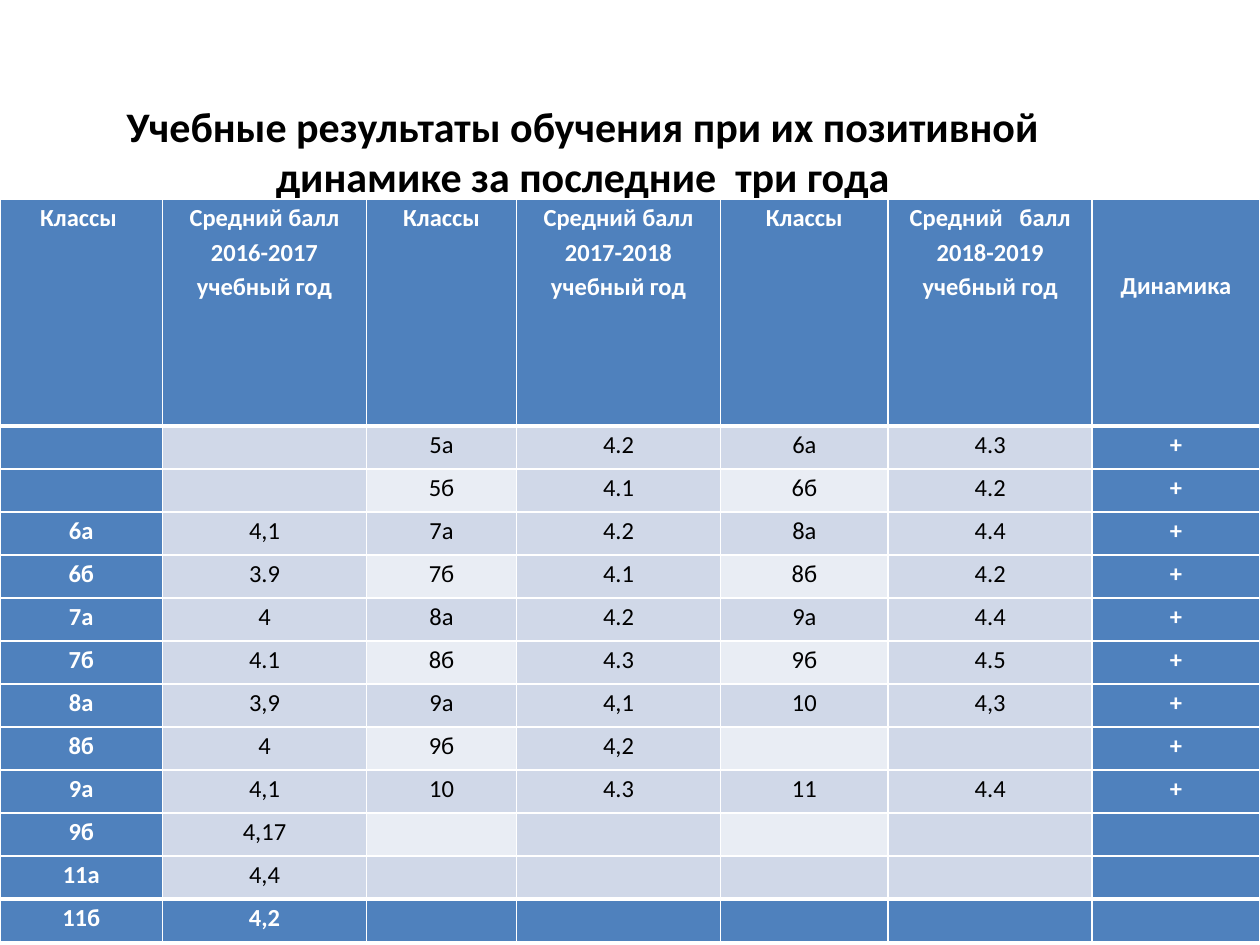
from lxml.etree import SubElement
from pptx import Presentation
from pptx.dml.color import RGBColor
from pptx.enum.text import MSO_ANCHOR, PP_ALIGN
from pptx.oxml.ns import qn
from pptx.util import Inches, Pt

BLUE = RGBColor(0x4F, 0x81, 0xBD)
BAND = RGBColor(0xD0, 0xD8, 0xE8)
PALE = RGBColor(0xE9, 0xED, 0xF4)
WHITE = RGBColor(0xFF, 0xFF, 0xFF)
BLACK = RGBColor(0x00, 0x00, 0x00)
FONT = "Calibri"

TITLE = "Учебные результаты обучения при их позитивной динамике за последние  три года"
COLUMN_WIDTHS = [1.29, 1.62, 1.19, 1.62, 1.33, 1.62, 1.33]
HEADER_HEIGHT = 1.8
HEADER_LINE = 0.27
ROWS = [
    ["Классы ", "Средний балл\n2016-2017\nучебный год", "Классы",
     "Средний балл\n2017-2018\nучебный год", "Классы",
     "Средний   балл\n2018-2019 учебный год", "Динамика"],
    ["", "", "5а", "4.2", "6а", "4.3", "+"],
    ["", "", "5б", "4.1", "6б", "4.2", "+"],
    ["6а", "4,1", "7а", "4.2", "8а", "4.4", "+"],
    ["6б", "3.9", "7б", "4.1", "8б", "4.2", "+"],
    ["7а", "4", "8а", "4.2", "9а", "4.4", "+"],
    ["7б", "4.1", "8б", "4.3", "9б", "4.5", "+"],
    ["8а", "3,9", "9а", "4,1", "10", "4,3", "+"],
    ["8б", "4", "9б", "4,2", "", "", "+"],
    ["9а", "4,1", "10", "4.3", "11", "4.4", "+"],
    ["9б", "4,17", "", "", "", "", ""],
    ["11а", "4,4", "", "", "", "", ""],
    ["11б", "4,2", "", "", "", "", ""],
]
LAST_ROW = len(ROWS) - 1
LAST_COLUMN = len(COLUMN_WIDTHS) - 1


def format_paragraph(paragraph, size, color, bold):
    """Centre a paragraph and style its runs."""
    paragraph.alignment = PP_ALIGN.CENTER
    for span in paragraph.runs:
        span.font.name = FONT
        span.font.size = Pt(size)
        span.font.bold = bold
        span.font.color.rgb = color


def set_borders(cell, top, bottom):
    """Draw white borders with the given top and bottom widths in points."""
    properties = cell._tc.get_or_add_tcPr()
    for side, width in (("L", 1), ("R", 1), ("T", top), ("B", bottom)):
        line = SubElement(properties, qn(f"a:ln{side}"), w=str(Pt(width)))
        fill = SubElement(line, qn("a:solidFill"))
        SubElement(fill, qn("a:srgbClr"), val=str(WHITE))


def fill_cell(cell, text, row, column):
    """Write and style one cell according to its place in the table."""
    emphasised = row in (0, LAST_ROW) or column in (0, LAST_COLUMN)
    pale = row % 2 == 0 and column in (2, 4)
    set_borders(cell, 3 if row in (1, LAST_ROW) else 1,
                3 if row in (0, LAST_ROW - 1) else 1)
    cell.fill.solid()
    cell.fill.fore_color.rgb = BLUE if emphasised else PALE if pale else BAND
    cell.margin_left = cell.margin_right = Inches(0.07)
    cell.margin_top = cell.margin_bottom = 0
    if text:
        cell.text_frame.text = text
        for paragraph in cell.text_frame.paragraphs:
            paragraph.line_spacing = 1.15
            format_paragraph(paragraph, 14, WHITE if emphasised else BLACK, emphasised)


def add_title(page, left, top, width, height):
    """Place the slide title in the given box."""
    box = page.shapes.title
    box.left, box.top, box.width, box.height = left, top, width, height
    frame = box.text_frame
    frame.text = TITLE
    frame.word_wrap = True
    frame.vertical_anchor = MSO_ANCHOR.MIDDLE
    frame.margin_bottom = Inches(0.4)
    format_paragraph(frame.paragraphs[0], 24, BLACK, True)


def add_results_table(page, left, top, width, height):
    """Place the table of average marks in the given box."""
    table = page.shapes.add_table(
        len(ROWS), len(COLUMN_WIDTHS), left, top, width, height).table
    table.horz_banding = False
    for column, column_width in zip(table.columns, COLUMN_WIDTHS):
        column.width = Inches(column_width)
    header_height = Inches(HEADER_HEIGHT)
    for index, row in enumerate(table.rows):
        row.height = (height - header_height) // LAST_ROW if index else header_height
    for row, texts in enumerate(ROWS):
        for column, text in enumerate(texts):
            fill_cell(table.cell(row, column), text, row, column)
    table.cell(0, LAST_COLUMN).margin_top = Inches(2 * HEADER_LINE)


def main():
    """Build the slide and save the deck."""
    deck = Presentation()
    deck.slide_width, deck.slide_height = Inches(10), Inches(7.5)
    page = deck.slides.add_slide(deck.slide_layouts[5])
    add_title(page, Inches(0.5), Inches(0.83), Inches(8.25), Inches(1.08))
    add_results_table(page, 0, Inches(1.58), Inches(10), Inches(5.9))
    deck.save("out.pptx")


if __name__ == "__main__":
    main()
